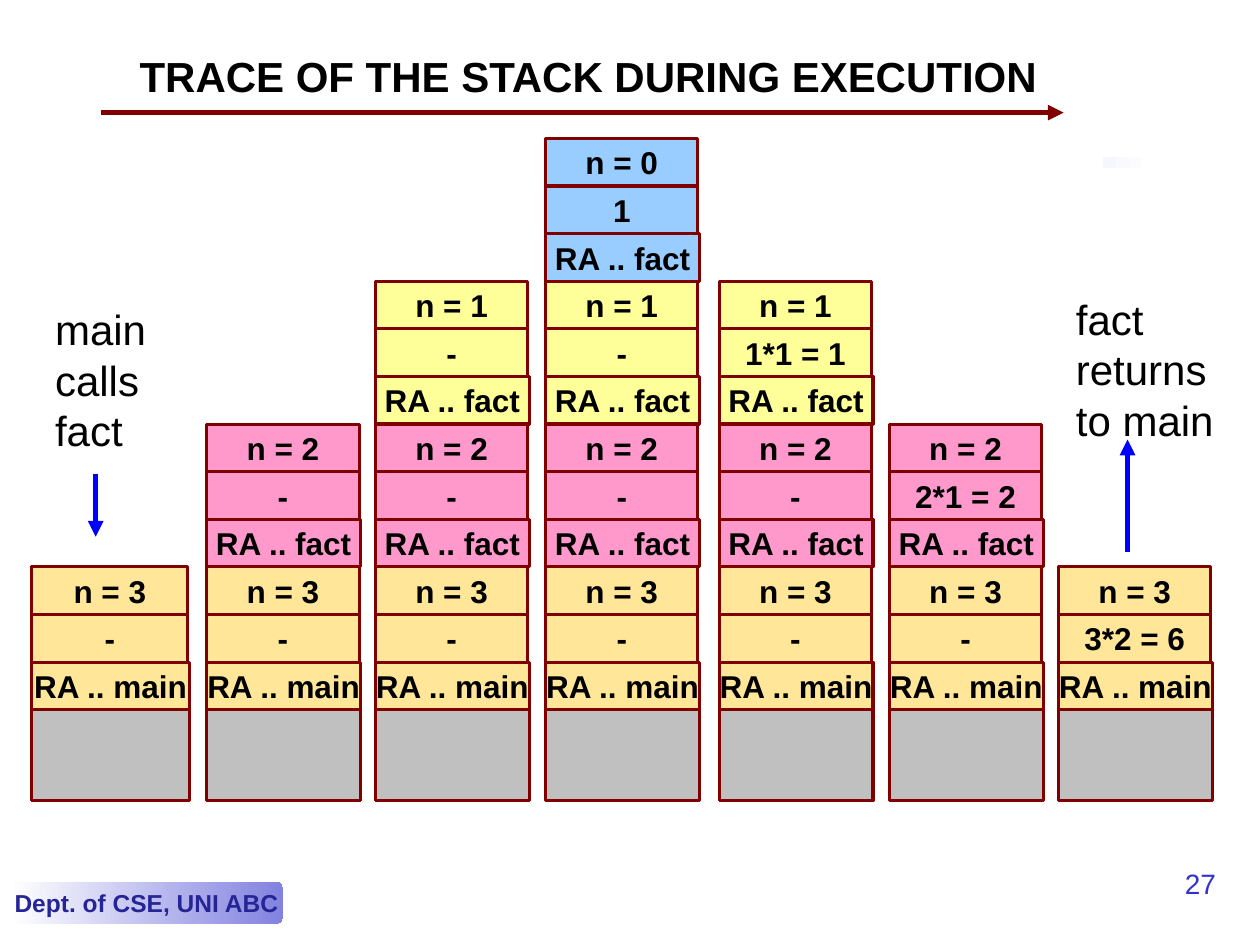
from lxml import etree
from pptx import Presentation
from pptx.dml.color import RGBColor
from pptx.enum.shapes import MSO_CONNECTOR, MSO_SHAPE
from pptx.enum.text import MSO_ANCHOR, PP_ALIGN
from pptx.oxml.ns import qn
from pptx.util import Cm, Pt

RECTANGLE, ROUNDED = MSO_SHAPE.RECTANGLE, MSO_SHAPE.ROUNDED_RECTANGLE
STRAIGHT = MSO_CONNECTOR.STRAIGHT
TOP, MIDDLE = MSO_ANCHOR.TOP, MSO_ANCHOR.MIDDLE
LEFT, CENTER, RIGHT = PP_ALIGN.LEFT, PP_ALIGN.CENTER, PP_ALIGN.RIGHT

BLACK = RGBColor(0x00, 0x00, 0x00)
WHITE = RGBColor(0xFF, 0xFF, 0xFF)
MAROON = RGBColor(0x80, 0x00, 0x00)
BLUE = RGBColor(0x00, 0x00, 0xFF)
INDIGO = RGBColor(0x33, 0x33, 0xCC)
NAVY = RGBColor(0x25, 0x25, 0x95)
LAVENDER = RGBColor(0x82, 0x82, 0xE0)
PALE = RGBColor(0xF6, 0xF6, 0xFD)
GRAY = RGBColor(0xC0, 0xC0, 0xC0)

# Frame colours for n = 3, 2, 1, 0
FRAME_COLORS = [
    RGBColor(0xFF, 0xE6, 0x99),
    RGBColor(0xFF, 0x99, 0xCC),
    RGBColor(0xFF, 0xFF, 0x99),
    RGBColor(0x99, 0xCC, 0xFF),
]

# Each stack: left edge, width, and the return value held in each frame
STACKS = [
    (0.64, 3.18, ["-"]),
    (4.17, 3.1, ["-", "-"]),
    (7.57, 3.1, ["-", "-", "-"]),
    (11.0, 3.1, ["-", "-", "-", "1"]),
    (14.5, 3.1, ["-", "-", "1*1 = 1"]),
    (17.93, 3.1, ["-", "2*1 = 2"]),
    (21.34, 3.1, ["3*2 = 6"]),
]
BASE_TOP, BASE_HEIGHT, CELL_HEIGHT = 14.31, 1.83, 0.96


def write(shape, text, size, color, bold=False, align=LEFT, anchor=TOP, wrap=True):
    frame = shape.text_frame
    frame.text = text
    frame.word_wrap = wrap
    frame.vertical_anchor = anchor
    para = frame.paragraphs[0]
    para.alignment = align
    font = para.runs[0].font
    font.name, font.size, font.bold = "Arial", Pt(size), bold
    font.color.rgb = color


def add_label(page, left, top, width, height, text, size, color, align=LEFT):
    box = page.shapes.add_textbox(Cm(left), Cm(top), Cm(width), Cm(height))
    write(box, text, size, color, align=align)
    return box


def add_block(page, left, top, width, height, color):
    block = page.shapes.add_shape(RECTANGLE, Cm(left), Cm(top), Cm(width), Cm(height))
    block.shadow.inherit = False
    block.fill.solid()
    block.fill.fore_color.rgb = color
    block.line.color.rgb = MAROON
    block.line.width = Pt(1.75)
    return block


def add_gradient(page, kind, left, top, width, height, start, end):
    band = page.shapes.add_shape(kind, Cm(left), Cm(top), Cm(width), Cm(height))
    band.shadow.inherit = False
    band.line.fill.background()
    band.fill.gradient()
    band.fill.gradient_angle = 0
    for stop, color in zip(band.fill.gradient_stops, (start, end)):
        stop.color.rgb = color
    return band


def add_arrow(page, x1, y1, x2, y2, color):
    arrow = page.shapes.add_connector(STRAIGHT, Cm(x1), Cm(y1), Cm(x2), Cm(y2))
    arrow.line.color.rgb = color
    arrow.line.width = Pt(3)
    etree.SubElement(arrow.line._get_or_add_ln(), qn("a:tailEnd"), type="triangle")
    etree.SubElement(arrow._element.spPr, qn("a:effectLst"))


def add_stack(page, left, width, results):
    add_block(page, left, BASE_TOP, width, BASE_HEIGHT, GRAY)
    top = BASE_TOP
    for level, result in enumerate(results):
        caller = "fact" if level else "main"
        for text in (f"RA .. {caller}", result, f"n = {3 - level}"):
            top -= CELL_HEIGHT
            # The return address cell is slightly wider than the others
            cell_width = width if text.startswith("RA") else width - 0.03
            cell = add_block(page, left, top, cell_width, CELL_HEIGHT, FRAME_COLORS[level])
            write(cell, text, 18, BLACK, True, CENTER, MIDDLE, wrap=False)


def add_title(page, text):
    title = page.shapes.title
    title.left, title.top, title.width, title.height = Cm(2.36), Cm(0.89), Cm(19), Cm(1.27)
    write(title, text, 24, BLACK, True, CENTER)


def main():
    deck = Presentation()
    deck.slide_width, deck.slide_height = Cm(25.4), Cm(19.05)
    page = deck.slides.add_slide(deck.slide_layouts[5])

    # Title, its arrow and the faint band beside it
    add_title(page, "TRACE OF THE STACK DURING EXECUTION")
    add_gradient(page, RECTANGLE, 22.23, 3.17, 1.06, 0.21, PALE, WHITE)
    add_arrow(page, 2.03, 2.27, 21.44, 2.27, MAROON)

    # Stack at each step
    for left, width, results in STACKS:
        add_stack(page, left, width, results)

    # First call and final return
    add_label(page, 0.86, 6, 3.63, 3.3, "main calls fact", 24, BLACK)
    add_arrow(page, 1.93, 9.55, 1.93, 10.82, BLUE)
    add_label(page, 21.44, 5.79, 3.96, 3.3, "fact returns to main", 24, BLACK)
    add_arrow(page, 22.73, 11.13, 22.73, 8.86, BLUE)

    # Footer
    badge = add_gradient(page, ROUNDED, 0.2, 17.78, 5.51, 0.84, WHITE, LAVENDER)
    write(badge, "Dept. of CSE, UNI ABC", 14, NAVY, True, CENTER, MIDDLE, wrap=False)
    add_label(page, 23.29, 17.35, 1.47, 1.27, "27", 16, INDIGO, RIGHT)

    deck.save("out.pptx")


if __name__ == "__main__":
    main()
